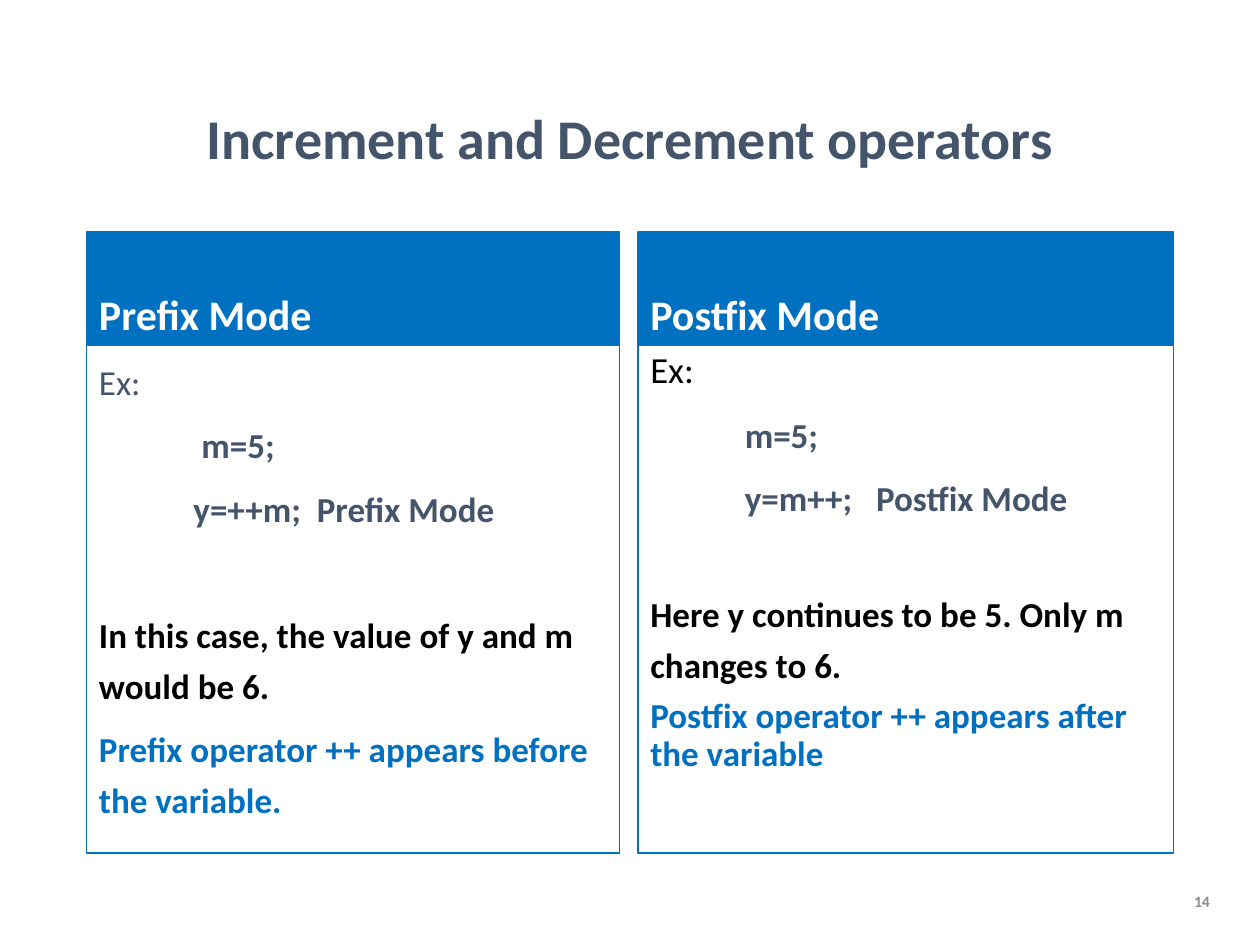
from pptx import Presentation
from pptx.dml.color import RGBColor
from pptx.enum import shapes, text
from pptx.oxml import parse_xml
from pptx.oxml.ns import nsdecls
from pptx.util import Pt

BLUE, SLATE, BLACK, WHITE, GREY = "0070C0", "44546A", "000000", "FFFFFF", "8C8C8C"
MID, LOW = text.MSO_ANCHOR.MIDDLE, text.MSO_ANCHOR.BOTTOM


def color(code):
    return RGBColor.from_string(code)


class Deck:
    """Holds the style and the current slide."""
    font = "Calibri"
    gap = 7.5

    def __init__(self, wide, high):
        self.prs = Presentation()
        self.prs.slide_width, self.prs.slide_height = Pt(wide), Pt(high)
        self.slide = self.prs.slides.add_slide(self.prs.slide_layouts[6])

    def para(self, par, words, size=20, hue=SLATE, bold=True, line=1.2,
             before=gap, align=text.PP_ALIGN.LEFT, tabs=()):
        if tabs:
            stops = "".join(f'<a:tab pos="{Pt(t)}" algn="l"/>' for t in tabs)
            par._p.get_or_add_pPr().append(
                parse_xml(f'<a:tabLst {nsdecls("a")}>{stops}</a:tabLst>'))
        form = dict(line_spacing=line, space_before=Pt(before), alignment=align)
        for key, val in form.items():
            setattr(par, key, val)
        run = par.add_run()
        run.text = words
        for key, val in dict(name=self.font, size=Pt(size), bold=bold).items():
            setattr(run.font, key, val)
        run.font.color.rgb = color(hue)

    def fill(self, shape, paras, anchor):
        frame = shape.text_frame
        form = dict(word_wrap=True, vertical_anchor=anchor)
        for key, val in form.items():
            setattr(frame, key, val)
        for i, spec_ in enumerate(paras):
            par = frame.add_paragraph() if i else frame.paragraphs[0]
            self.para(par, **({} if i else {"before": 0}), **spec_)

    def label(self, box, anchor=MID, **form):
        shape = self.slide.shapes.add_textbox(*map(Pt, box))
        self.fill(shape, [form], anchor)

    def panel(self, box, paras, back=None, anchor=text.MSO_ANCHOR.TOP):
        shape = self.slide.shapes.add_shape(
            shapes.MSO_SHAPE.RECTANGLE, *map(Pt, box))
        shape.shadow.inherit = False
        if back:
            shape.fill.solid()
            shape.fill.fore_color.rgb = color(back)
        else:
            shape.fill.background()
        shape.line.color.rgb = color(BLUE)
        shape.line.width = Pt(0.75)
        self.fill(shape, paras, anchor)


def main():
    deck = Deck(720, 540)

    # Title
    deck.label((49.5, 28.8, 621, 104), words="Increment and Decrement operators",
               size=32, line=0.9, align=text.PP_ALIGN.CENTER)

    # Two modes: left, width, heading, body
    prefix = [
        dict(words="Ex:", bold=False),
        dict(words="\tm=5;", tabs=[58.5]),
        dict(words="\ty=++m;\tPrefix Mode", tabs=[54, 124.5]),
        dict(words="In this case, the value of y and m would be 6.",
             hue=BLACK, before=43.5),
        dict(words="Prefix operator ++ appears before the variable.", hue=BLUE),
    ]
    postfix = [
        dict(words="Ex:", size=21, hue=BLACK, bold=False, line=0.9),
        dict(words="\tm=5;", tabs=[54]),
        dict(words="\ty=m++;\tPostfix Mode", tabs=[54, 129]),
        dict(words="Here y continues to be 5. Only m changes to 6.",
             hue=BLACK, before=37.5),
        dict(words="Postfix operator ++ appears after the variable",
             hue=BLUE, line=0.9),
    ]
    top, head, body = 132.5, 65, 290
    for left, wide, name, paras in ((49.5, 304.5, "Prefix Mode", prefix),
                                    (364.5, 306, "Postfix Mode", postfix)):
        deck.panel((left, top, wide, head),
                   [dict(words=name, size=24, hue=WHITE, line=0.9)], BLUE, LOW)
        deck.panel((left, top + head, wide, body), paras)

    # Slide number
    deck.label((670.5, 500.5, 28, 28.8), words="14", size=9, hue=GREY,
               line=1.0, align=text.PP_ALIGN.RIGHT)

    deck.prs.save("out.pptx")


if __name__ == "__main__":
    main()
